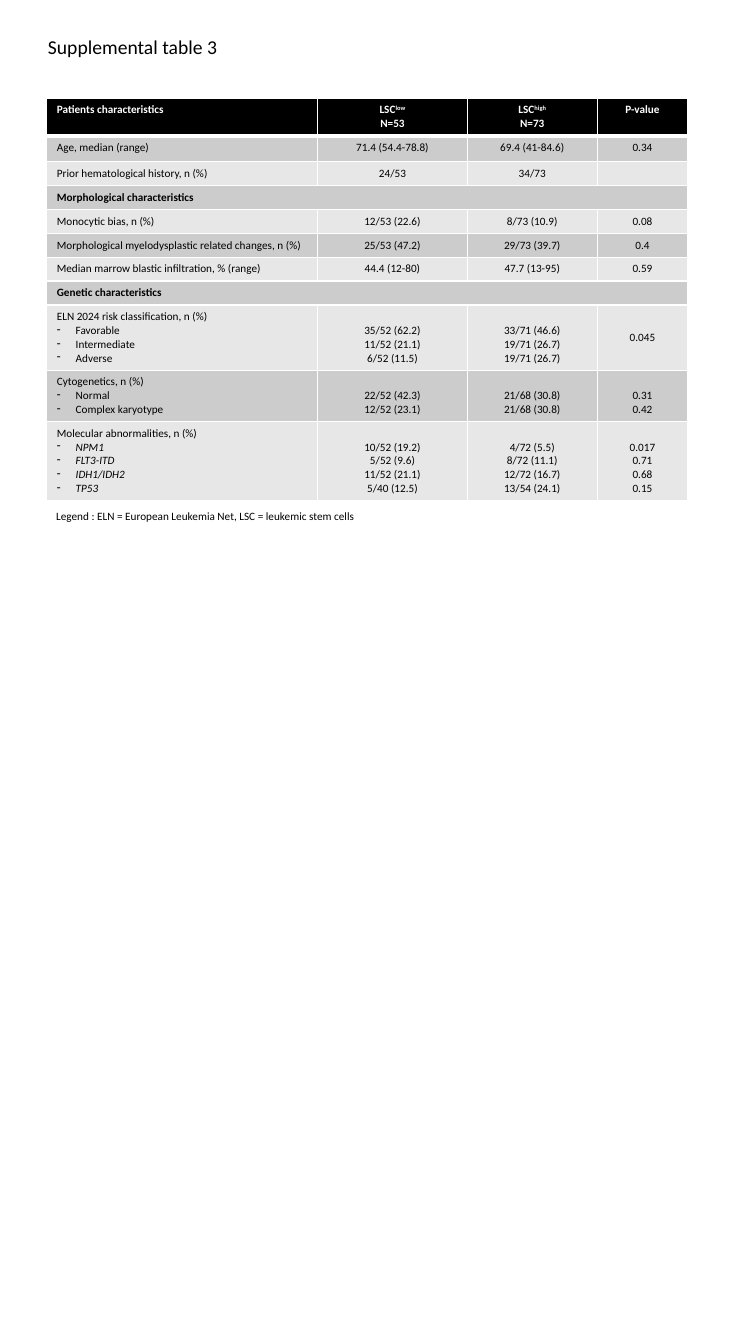
from lxml.etree import SubElement
from pptx import Presentation
from pptx.dml.color import RGBColor
from pptx.enum.text import MSO_ANCHOR, MSO_AUTO_SIZE, PP_ALIGN
from pptx.oxml.ns import qn
from pptx.util import Pt

HUES = {"ink": "000000", "paper": "FFFFFF", "dark": "CCCCCC", "light": "E7E7E7"}
LINE = 9.8
WIDTHS = [193.5, 107, 92.7, 64.7]
HEIGHTS = [27, 18.5] + [17] * 6 + [46.5, 36.5, 56]
# "^" starts a superscript, "- " a list item, "* " an italic list item.
ROWS = [
    ["Patients characteristics", "LSC^low\nN=53", "LSC^high\nN=73", "P-value"],
    ["Age, median (range)", "71.4 (54.4-78.8)", "69.4 (41-84.6)", "0.34"],
    ["Prior hematological history, n (%)", "24/53", "34/73", ""],
    ["Morphological characteristics"],
    ["Monocytic bias, n (%)", "12/53 (22.6)", "8/73 (10.9)", "0.08"],
    ["Morphological myelodysplastic related changes, n (%)",
     "25/53 (47.2)", "29/73 (39.7)", "0.4"],
    ["Median marrow blastic infiltration, % (range)",
     "44.4 (12-80)", "47.7 (13-95)", "0.59"],
    ["Genetic characteristics"],
    ["ELN 2024 risk classification, n (%)\n- Favorable\n- Intermediate\n- Adverse",
     "35/52 (62.2)\n11/52 (21.1)\n6/52 (11.5)",
     "33/71 (46.6)\n19/71 (26.7)\n19/71 (26.7)", "0.045"],
    ["Cytogenetics, n (%)\n- Normal\n- Complex karyotype",
     "22/52 (42.3)\n12/52 (23.1)", "21/68 (30.8)\n21/68 (30.8)", "0.31\n0.42"],
    ["Molecular abnormalities, n (%)\n* NPM1\n* FLT3-ITD\n* IDH1/IDH2\n* TP53",
     "10/52 (19.2)\n5/52 (9.6)\n11/52 (21.1)\n5/40 (12.5)",
     "4/72 (5.5)\n8/72 (11.1)\n12/72 (16.7)\n13/54 (24.1)",
     "0.017\n0.71\n0.68\n0.15"],
]


def put(item, **vals):
    for name, val in vals.items():
        setattr(item, name, val)


class Page:
    def __init__(self, slide):
        self.slide = slide
        self.face = "Calibri"

    def line(self, para, text, size=8, hue="ink", bold=False, align=PP_ALIGN.LEFT):
        """Fill one paragraph, reading the marks for lists and superscripts."""
        para.alignment = align
        italic = text.startswith("* ")
        if text.startswith(("- ", "* ")):
            text = text[2:]
            props = para._p.get_or_add_pPr()
            props.set("marL", str(Pt(13.5)))
            props.set("indent", str(-Pt(13.5)))
            SubElement(props, qn("a:buChar"), char="-")
        for i, part in enumerate(text.split("^") if text else []):
            run = para.add_run()
            run.text = part
            put(run.font, name=self.face, size=Pt(size), bold=bold, italic=italic)
            run.font.color.rgb = RGBColor.from_string(HUES[hue])
            if i:
                run._r.get_or_add_rPr().set("baseline", "30000")
        SubElement(para._p, qn("a:endParaRPr"), sz=str(size * 100))

    def lines(self, frame, text, **style):
        for i, part in enumerate(text.split("\n")):
            para = frame.add_paragraph() if i else frame.paragraphs[0]
            self.line(para, part, **style)

    def title(self, text, left, top, width, height):
        shape = self.slide.shapes.title
        put(shape, left=Pt(left), top=Pt(top), width=Pt(width), height=Pt(height))
        put(shape.text_frame, word_wrap=False, auto_size=MSO_AUTO_SIZE.NONE,
            vertical_anchor=MSO_ANCHOR.TOP)
        para = shape.text_frame.paragraphs[0]
        put(para, line_spacing=1.0, space_before=Pt(0))
        self.line(para, text, size=14)

    def note(self, text, *box):
        frame = self.slide.shapes.add_textbox(*map(Pt, box)).text_frame
        frame.word_wrap = True
        self.lines(frame, text)

    def edge(self, cell, **wide):
        """Draw cell borders; wide gives the side letters and their points."""
        props = cell._tc.get_or_add_tcPr()
        for side, size in wide.items():
            rule = SubElement(props, qn("a:ln" + side), w=str(Pt(size)))
            fill = SubElement(rule, qn("a:solidFill"))
            SubElement(fill, qn("a:srgbClr"), val=HUES["paper"])

    def cell(self, cell, text, row, col, head):
        self.edge(cell, L=1, R=1, T=3 if row == 1 else 1, B=1 if row else 3)
        hue = ("light", "dark")[row % 2] if row else "ink"
        cell.fill.solid()
        cell.fill.fore_color.rgb = RGBColor.from_string(HUES[hue])
        if row and col and "\n" in text:
            cell.margin_top = Pt(3.6 + LINE)
        if text == "0.045":
            cell.vertical_anchor = MSO_ANCHOR.MIDDLE
        self.lines(cell.text_frame, text, bold=head or not row,
                   hue="ink" if row else "paper",
                   align=PP_ALIGN.CENTER if col else PP_ALIGN.LEFT)

    def table(self, rows, left, top):
        box = map(Pt, (left, top, sum(WIDTHS), sum(HEIGHTS)))
        grid = self.slide.shapes.add_table(len(rows), len(WIDTHS), *box).table
        grid.horz_banding = False
        for col, width in zip(grid.columns, WIDTHS):
            col.width = Pt(width)
        for row, height in zip(grid.rows, HEIGHTS):
            row.height = Pt(height)
        for r, texts in enumerate(rows):
            head = len(texts) == 1
            for c in range(len(WIDTHS)):
                text = texts[c] if c < len(texts) else ""
                self.cell(grid.cell(r, c), text, r, c, head)
            if head:
                grid.cell(r, 0).merge(grid.cell(r, len(WIDTHS) - 1))


def main():
    deck = Presentation()
    put(deck, slide_width=Pt(540), slide_height=Pt(960))
    page = Page(deck.slides.add_slide(deck.slide_layouts[5]))
    page.title("Supplemental table 3", 27, 21, 137, 24)
    page.table(ROWS, 33.4, 70)
    page.note("Legend : ELN = European Leukemia Net, LSC = leukemic stem cells",
              33, 360, 492, 17)
    deck.save("out.pptx")


if __name__ == "__main__":
    main()
